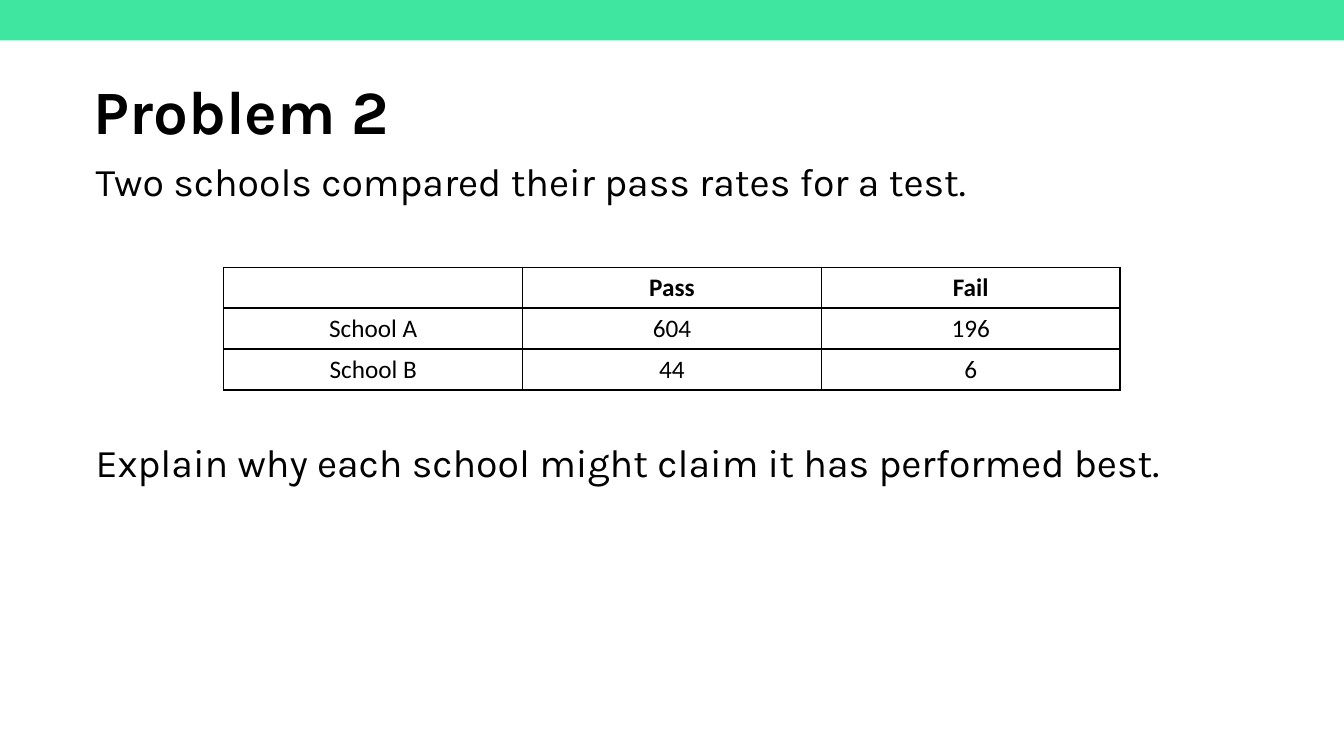
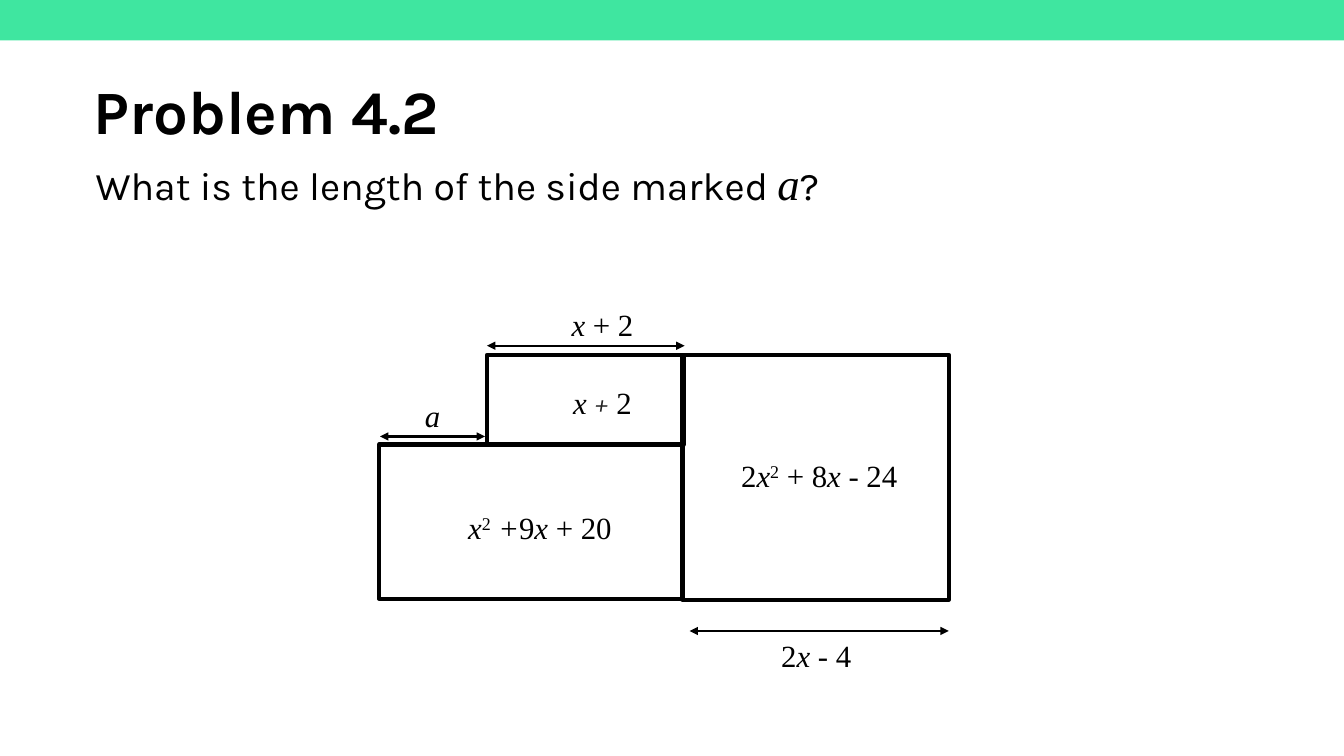
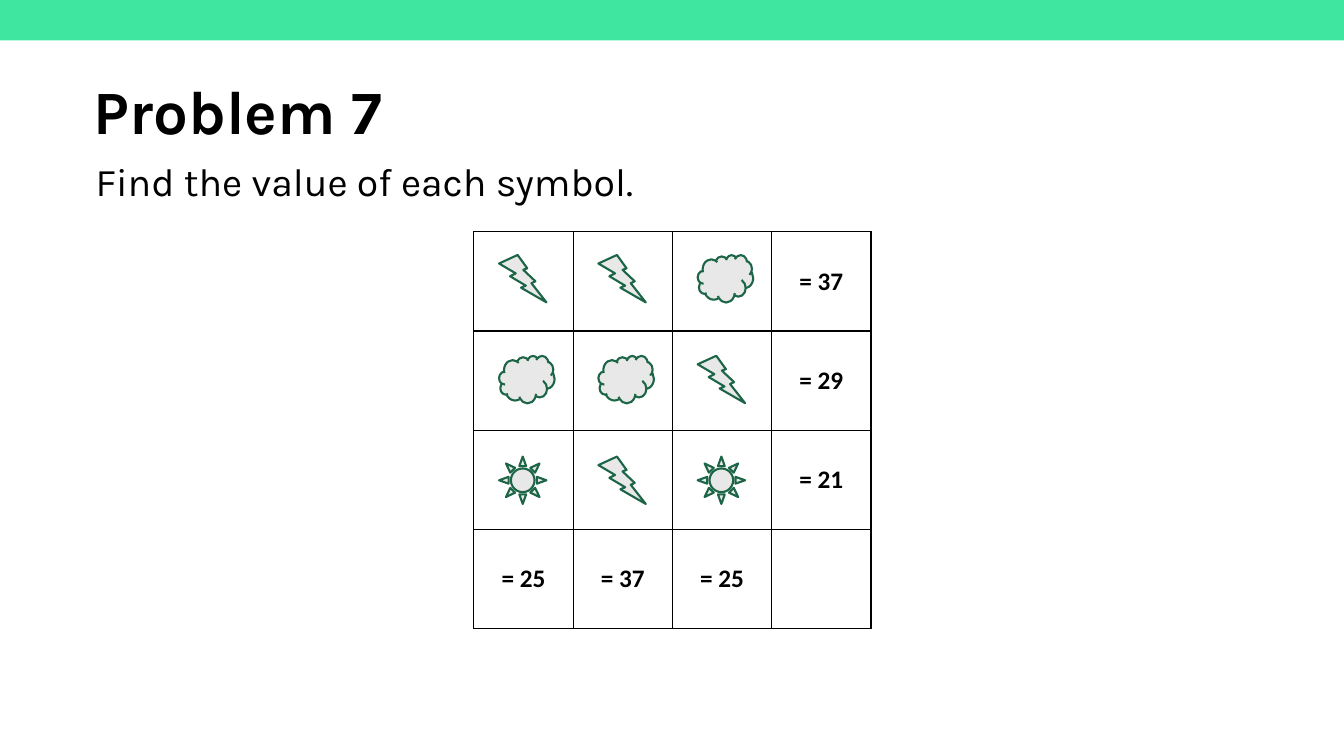
from lxml.etree import SubElement
from pptx import Presentation
from pptx.dml.color import RGBColor
from pptx.enum.shapes import MSO_CONNECTOR, MSO_SHAPE
from pptx.enum.text import MSO_ANCHOR, PP_ALIGN
from pptx.oxml.ns import qn
from pptx.util import Inches, Pt

COLORS = {"band": "3FE6A0", "ink": "000000", "soft": "222222",
          "paper": "FFFFFF", "symbol": "E8E8E8", "outline": "1C6546"}
HEAD, MATH, CELL = "Karla", "Times New Roman", "Calibri"
BODY = (0.85, 1.56, 11.5, 5.12)
ITALIC, SUPER = {"italic": True}, {"base": 30000}


def rgb(name):
    return RGBColor.from_string(COLORS[name])


def add_run(p, text, size, font, color="ink", bold=False, italic=False, base=0):
    r = p.add_run()
    r.text = text
    f = r.font
    f.size, f.name, f.bold, f.italic = Pt(size), font, bold, italic
    f.color.rgb = rgb(color)
    if base:
        f._element.set("baseline", str(base))


def add_box(s, box, anchor=MSO_ANCHOR.TOP, inset=None):
    tf = s.shapes.add_textbox(*map(Inches, box)).text_frame
    tf.word_wrap = True
    tf.vertical_anchor = anchor
    if inset is not None:
        tf.margin_left = tf.margin_right = tf.margin_top = tf.margin_bottom = Inches(inset)
    return tf


def add_shape(s, kind, box, fill=None, line=None, width=0):
    sp = s.shapes.add_shape(kind, *map(Inches, box))
    sp.shadow.inherit = False
    if fill:
        sp.fill.solid()
        sp.fill.fore_color.rgb = rgb(fill)
    else:
        sp.fill.background()
    if line:
        sp.line.color.rgb = rgb(line)
        sp.line.width = Pt(width)
    else:
        sp.line.fill.background()


def add_problem(prs, title):
    s = prs.slides.add_slide(prs.slide_layouts[6])
    add_shape(s, MSO_SHAPE.RECTANGLE, (0, -0.02, 13.33, 0.42), "band")
    p = add_box(s, (0.83, 0.41, 11.5, 1.45), MSO_ANCHOR.MIDDLE).paragraphs[0]
    p.line_spacing = 0.9
    add_run(p, title, 44, HEAD, bold=True)
    return s


def add_body(s, paragraphs, gap=10):
    tf = add_box(s, BODY)
    for i, runs in enumerate(paragraphs):
        p = tf.add_paragraph() if i else tf.paragraphs[0]
        p.line_spacing = 0.9
        if i:
            p.space_before = Pt(gap)
        for text, style in runs:
            add_run(p, text, **{"size": 28, "font": HEAD, **style})


def add_borders(cell):
    tcPr = cell._tc.get_or_add_tcPr()
    for i, side in enumerate(("a:lnL", "a:lnR", "a:lnT", "a:lnB")):
        ln = tcPr.makeelement(qn(side), {"w": str(Pt(1))})
        tcPr.insert(i, ln)
        fill = SubElement(ln, qn("a:solidFill"))
        SubElement(fill, qn("a:srgbClr"), val=COLORS["ink"])


def add_grid(s, box, rows, is_bold, anchor=MSO_ANCHOR.TOP):
    frame = s.shapes.add_table(len(rows), len(rows[0]), *map(Inches, box))
    table = frame.table
    table.first_row = table.horz_banding = False
    for r, row in enumerate(rows):
        for c, text in enumerate(row):
            cell = table.cell(r, c)
            cell.fill.solid()
            cell.fill.fore_color.rgb = rgb("paper")
            cell.vertical_anchor = anchor
            add_borders(cell)
            if text:
                p = cell.text_frame.paragraphs[0]
                p.alignment = PP_ALIGN.CENTER
                add_run(p, text, 18, CELL, bold=is_bold(r))


def add_label(s, box, runs):
    p = add_box(s, box, inset=0).paragraphs[0]
    p.alignment = PP_ALIGN.CENTER
    p.line_spacing = 1.15
    for text, style in runs:
        add_run(p, text, **{"size": 22, "font": MATH, **style})


def add_measure(s, x1, x2, y):
    line = s.shapes.add_connector(MSO_CONNECTOR.STRAIGHT, *map(Inches, (x1, y, x2, y)))
    line.line.color.rgb = rgb("ink")
    line.line.width = Pt(1.5)
    ln = line.line._get_or_add_ln()
    for end in ("a:headEnd", "a:tailEnd"):
        SubElement(ln, qn(end), type="triangle")
    SubElement(line._element.spPr, qn("a:effectLst"))


def add_areas(s, left, top):
    def at(x, y, *size):
        return (left + x, top + y, *size)

    for box in (at(1.07, 0, 1.95, 0.89), at(0, 0.89, 3.01, 1.53), at(3.01, 0, 2.64, 2.43)):
        add_shape(s, MSO_SHAPE.RECTANGLE, box, line="ink", width=3)
    for x1, x2, y in ((0.01, 1.05, 0.81), (1.07, 3.03, -0.09), (3.08, 5.65, 2.74)):
        add_measure(s, left + x1, left + x2, top + y)

    plus = {"size": 20, "font": "Cambria", "color": "soft", "italic": True}
    labels = [
        (at(0.37, 0.36, 0.32, 0.37), [("a", ITALIC)]),
        (at(1.64, -0.54, 1.15, 0.37), [("x ", ITALIC), ("+ 2", {})]),
        (at(1.64, 0.23, 1.15, 0.57), [("x ", ITALIC), ("+", plus), (" 2", {})]),
        (at(0.53, 1.47, 2.13, 0.57), [("x", ITALIC), ("2", SUPER), (" +", ITALIC),
                                      ("9", {}), ("x ", ITALIC), ("+ 20", {})]),
        (at(3.08, 0.96, 2.57, 0.57), [("2", {}), ("x", ITALIC), ("2", SUPER),
                                      (" + 8", {}), ("x", ITALIC), (" - 24", {})]),
        (at(3.76, 2.74, 1.15, 0.57), [("2", {}), ("x ", ITALIC), ("- 4", {})]),
    ]
    for box, runs in labels:
        add_label(s, box, runs)


def add_symbols(s, left, top, pattern, pitch):
    kinds = {"bolt": (MSO_SHAPE.LIGHTNING_BOLT, 0.47),
             "cloud": (MSO_SHAPE.CLOUD, 0.55),
             "sun": (MSO_SHAPE.SUN, 0.47)}
    for r, row in enumerate(pattern):
        for c, name in enumerate(row):
            kind, width = kinds[name]
            box = (left + c * pitch, top + r, width, 0.47)
            add_shape(s, kind, box, "symbol", "outline", 1.5)


def schools_slide(prs):
    s = add_problem(prs, "Problem 2")
    add_body(s, [[("Two schools compared their pass rates for a test.", {})],
                 [("Explain why each school might claim it has performed best.", {})]], gap=171)
    rows = [("", "Pass", "Fail"), ("School A", "604", "196"), ("School B", "44", "6")]
    add_grid(s, (2.22, 2.65, 8.89, 1.22), rows, lambda r: r == 0)


def areas_slide(prs):
    s = add_problem(prs, "Problem 4.2")
    add_body(s, [[("What is the length of the side marked ", {}),
                  ("a", {"size": 32, "font": MATH, "italic": True}), ("?", {})]])
    add_areas(s, 3.76, 3.52)


def symbols_slide(prs):
    s = add_problem(prs, "Problem 7")
    add_body(s, [[("Find the value of each symbol.", {})]])
    left, top, size = 4.7, 2.3, 3.94
    rows = [("", "", "", f"= {total}") for total in (37, 29, 21)]
    rows.append(("= 25", "= 37", "= 25", ""))
    add_grid(s, (left, top, size, size), rows, lambda r: True, MSO_ANCHOR.MIDDLE)
    pattern = [("bolt", "bolt", "cloud"), ("cloud", "cloud", "bolt"), ("sun", "bolt", "sun")]
    add_symbols(s, left + 0.25, top + 0.23, pattern, size / 4)


def main():
    prs = Presentation()
    prs.slide_width, prs.slide_height = Inches(13.33), Inches(7.5)
    for build in (schools_slide, areas_slide, symbols_slide):
        build(prs)
    prs.save("out.pptx")


if __name__ == "__main__":
    main()
